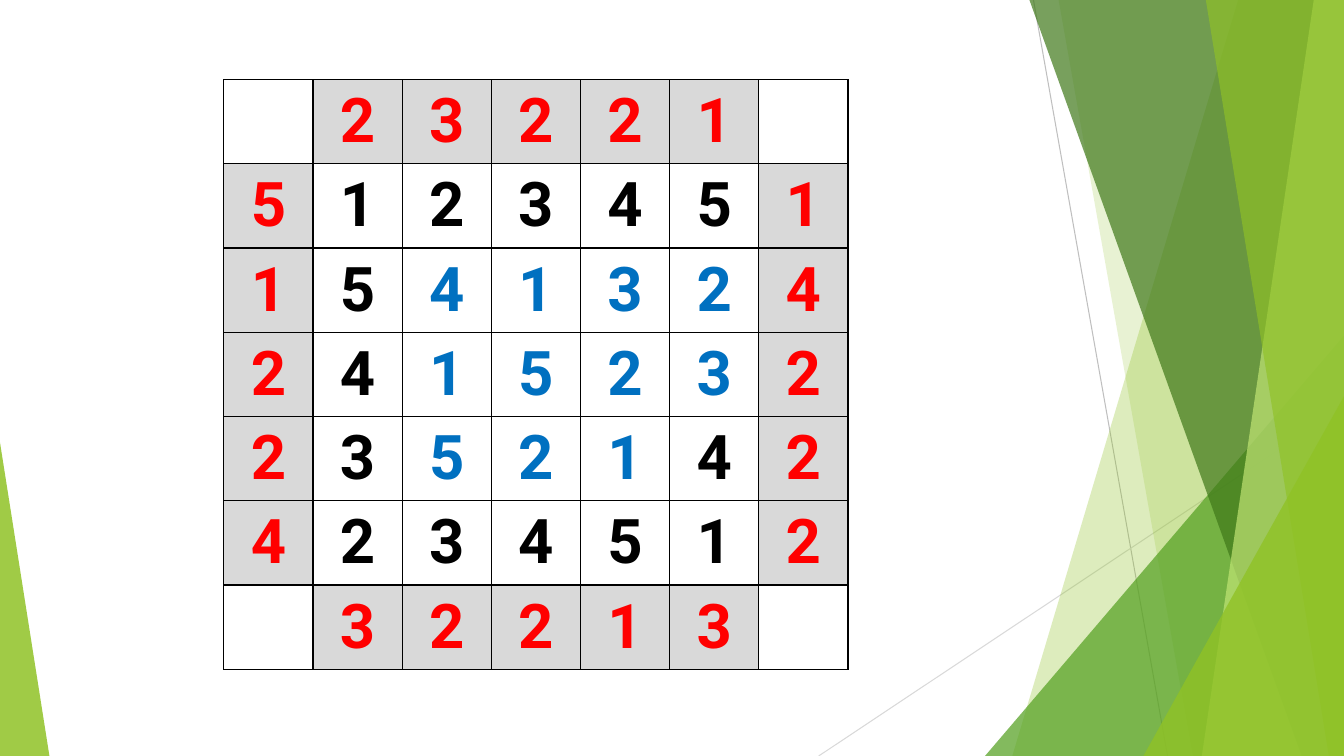
import pptx
import pptx.dml.color
import pptx.enum.shapes
import pptx.enum.text
import pptx.oxml
import pptx.oxml.ns
import pptx.util
from pptx.util import Inches

COLORS = {
    "clue": "FF0000", "given": "000000", "solved": "0070C0",
    "clue_fill": "D9D9D9", "border": "000000",
    "line": "BFBFBF", "pale_line": "D9D9D9",
    "green": "90C226", "leaf": "54A021", "forest": "3F7819", "lime": "C0E474",
}
WIDTH, HEIGHT = 13.33, 7.5

PUZZLE = [
    " 23221 ",
    "5123451",
    "1541324",
    "2415232",
    "2352142",
    "4234512",
    " 32213 ",
]
# Columns worked out by the solver, by row
SOLVED = {2: range(2, 6), 3: range(2, 6), 4: range(2, 5)}


def rgb(name):
    return pptx.dml.color.RGBColor.from_string(COLORS[name])


def add_child(parent, tag, **attributes):
    child = parent.makeelement(pptx.oxml.ns.qn(tag), attributes)
    parent.append(child)
    return child


class PuzzleSlide:
    font = "Roboto"
    font_size = pptx.util.Pt(44)

    def __init__(self, presentation):
        self.slide = presentation.slides.add_slide(presentation.slide_layouts[6])
        self.shapes = self.slide.shapes

    def line(self, start, end, color):
        connector = self.shapes.add_connector(
            pptx.enum.shapes.MSO_CONNECTOR.STRAIGHT,
            *(Inches(value) for value in start + end))
        connector.line.color.rgb = rgb(color)
        connector.line.width = pptx.util.Pt(0.75)
        add_child(connector._element.spPr, "a:effectLst")

    def paint(self, shape, color, opacity):
        shape.shadow.inherit = False
        shape.fill.solid()
        shape.fill.fore_color.rgb = rgb(color)
        shape.line.fill.background()
        fill_color = shape._element.spPr.find(".//" + pptx.oxml.ns.qn("a:srgbClr"))
        add_child(fill_color, "a:alpha", val=str(opacity * 1000))

    def band(self, top_left, top_right, bottom_left, color, opacity):
        """Full-height facet that ends at the right edge of the slide."""
        corners = [(top_left, 0), (top_right, 0), (WIDTH, 0),
                   (WIDTH, HEIGHT), (bottom_left, HEIGHT)]
        points = [(Inches(x), Inches(y)) for x, y in corners]
        builder = self.shapes.build_freeform(*points[0], scale=1.0)
        builder.add_line_segments(points[1:], close=True)
        self.paint(builder.convert_to_shape(), color, opacity)

    def triangle(self, left, top, width, apex, color, opacity):
        """Triangle standing on the bottom edge of the slide."""
        shape = self.shapes.add_shape(
            pptx.enum.shapes.MSO_SHAPE.ISOSCELES_TRIANGLE,
            Inches(left), Inches(top), Inches(width), Inches(HEIGHT - top))
        shape.adjustments[0] = apex
        self.paint(shape, color, opacity)

    def border(self, cell):
        properties = cell._tc.get_or_add_tcPr()
        for position, side in enumerate(("a:lnL", "a:lnR", "a:lnT", "a:lnB")):
            edge = properties.makeelement(pptx.oxml.ns.qn(side), {"w": "12700"})
            fill = add_child(edge, "a:solidFill")
            add_child(fill, "a:srgbClr", val=COLORS["border"])
            properties.insert(position, edge)

    def cell(self, cell, digit, color):
        cell.fill.background()
        self.border(cell)
        if not digit.strip():
            return
        if color == "clue":
            cell.fill.solid()
            cell.fill.fore_color.rgb = rgb("clue_fill")
        cell.vertical_anchor = pptx.enum.text.MSO_ANCHOR.MIDDLE
        cell.text_frame.text = digit
        paragraph = cell.text_frame.paragraphs[0]
        paragraph.alignment = pptx.enum.text.PP_ALIGN.CENTER
        font = paragraph.runs[0].font
        font.name, font.size, font.bold = self.font, self.font_size, True
        font.color.rgb = rgb(color)

    def puzzle(self, left, top, width, height):
        size = len(PUZZLE)
        table = self.shapes.add_table(
            size, size, Inches(left), Inches(top), Inches(width), Inches(height)).table
        table.first_row = table.horz_banding = False
        for column in table.columns:
            column.width = Inches(width / size)
        for row in table.rows:
            row.height = Inches(height / size)
        edges = (0, size - 1)
        for row, digits in enumerate(PUZZLE):
            for column, digit in enumerate(digits):
                if row in edges or column in edges:
                    color = "clue"
                elif column in SOLVED.get(row, ()):
                    color = "solved"
                else:
                    color = "given"
                self.cell(table.cell(row, column), digit, color)


def main():
    presentation = pptx.Presentation()
    presentation.slide_width = Inches(WIDTH)
    presentation.slide_height = Inches(HEIGHT)
    page = PuzzleSlide(presentation)

    page.line((10.25, 0), (11.58, HEIGHT), "line")
    page.line((WIDTH, 4.03), (8.12, HEIGHT), "pale_line")
    page.band(12.28, WIDTH, 10.04, "green", 30)
    page.band(10.5, WIDTH, 11.83, "green", 20)
    page.triangle(9.77, 3.33, 3.56, 1, "leaf", 72)
    page.band(10.21, WIDTH, 12.91, "forest", 70)
    page.band(13.03, WIDTH, 11.92, "lime", 70)
    page.band(11.96, WIDTH, 13.18, "green", 65)
    page.triangle(11.34, 3.93, 1.99, 1, "green", 80)
    page.triangle(0, 4.39, 0.49, 0, "green", 85)
    page.puzzle(2.22, 0.79, 6.19, 5.85)

    presentation.save("out.pptx")


if __name__ == "__main__":
    main()
